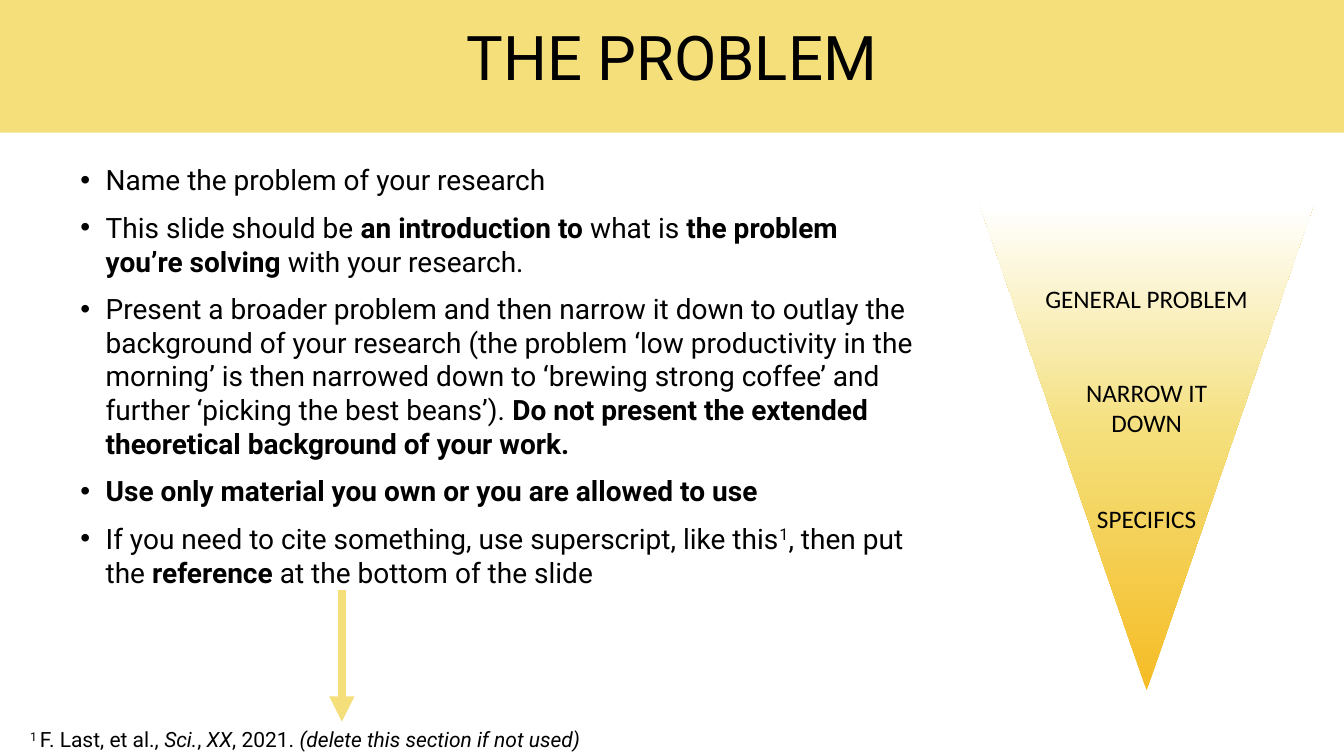
from collections import namedtuple
from dataclasses import dataclass

from lxml import etree
from pptx import Presentation
from pptx.dml.color import RGBColor
from pptx.enum.shapes import MSO_CONNECTOR as Connector, MSO_SHAPE as Preset
from pptx.enum.text import MSO_ANCHOR as Anchor, MSO_AUTO_SIZE as AutoSize, PP_ALIGN as Align
from pptx.oxml.ns import qn
from pptx.util import Inches, Pt

Box = namedtuple("Box", "column row columns rows")


@dataclass(frozen=True)
class Theme:
    """Colours, fonts and type sizes of the slide."""
    ink: str = "000000"
    yellow: str = "F4DF7A"
    funnel_stops: tuple = ((0, "F5BC25"), (52, "F4DF7A"), (99, "FFFFFF"))
    font: str = "Roboto"
    label_font: str = "Calibri"
    title_size: int = 44
    body_size: int = 20
    label_size: int = 18
    reference_size: int = 15
    arrow_width: int = 6


THEME = Theme()
COLUMNS, ROWS = 80, 45
SLIDE_WIDTH, SLIDE_HEIGHT = Inches(13.33), Inches(7.5)
STYLES = {"bold": {"bold": True}, "italic": {"italic": True}}

BULLETS = [
    [("Name the problem of your research", "")],
    [("This slide should be ", ""), ("an introduction to ", "bold"), ("what is", ""),
     (" the problem you’re solving ", "bold"), ("with your research.", "")],
    [("Present a broader problem and then narrow it down to outlay the background of your "
      "research (the problem ‘low productivity in the morning’ is then narrowed down to "
      "‘brewing strong coffee’ and further ‘picking the best beans’). ", ""),
     ("Do not present the extended theoretical background of your work.", "bold")],
    [("Use only material you own or you are allowed to use", "bold")],
    [("If you need to cite something, use superscript, like this", ""), ("1", "superscript"),
     (", then put the ", ""), ("reference", "bold"), (" at the bottom of the slide", "")],
]
REFERENCE = [
    ("1 ", "superscript"), ("F. Last, et al., ", ""), ("Sci.", "italic"), (", ", ""),
    ("XX", "italic"), (", 2021. ", ""), ("(delete this section if not used)", "italic"),
]
FUNNEL_LABELS = [
    (["GENERAL PROBLEM"], Box(3.3, 4.55, 13.4, 2.4)),
    (["NARROW IT", "DOWN"], Box(5.78, 10.15, 8.45, 4.25)),
    (["SPECIFICS"], Box(6.43, 17.65, 7.15, 2.4)),
]


def place(box):
    """Turn a grid box into slide lengths."""
    across, down = SLIDE_WIDTH / COLUMNS, SLIDE_HEIGHT / ROWS
    return (round(box.column * across), round(box.row * down),
            round(box.columns * across), round(box.rows * down))


def apply(target, values):
    """Set each named attribute on the target."""
    for name, value in values.items():
        setattr(target, name, value)


def add_preset(slide, preset, box):
    """Add a yellow preset shape without line or shadow."""
    shape = slide.shapes.add_shape(preset, *place(box))
    shape.shadow.inherit = False
    shape.line.fill.background()
    shape.fill.solid()
    shape.fill.fore_color.rgb = RGBColor.from_string(THEME.yellow)
    return shape


def add_bullet(paragraph):
    """Give a paragraph a hanging round bullet."""
    properties = paragraph._p.get_or_add_pPr()
    properties.set("marL", str(Inches(0.25)))
    properties.set("indent", str(-Inches(0.25)))
    etree.SubElement(properties, qn("a:buFont"), typeface="Arial")
    etree.SubElement(properties, qn("a:buChar"), char="•")


def add_text(slide, box, paragraphs, size, font=THEME.font, frame_format=None,
             paragraph_format=None, bulleted=False, gap=0):
    """Add a text box with one paragraph per list of styled runs."""
    frame = slide.shapes.add_textbox(*place(box)).text_frame
    apply(frame, {"word_wrap": True, "vertical_anchor": Anchor.TOP, **(frame_format or {})})
    for index, runs in enumerate(paragraphs):
        paragraph = frame.add_paragraph() if index else frame.paragraphs[0]
        if bulleted:
            add_bullet(paragraph)
        apply(paragraph, paragraph_format or {})
        if index and gap:
            paragraph.space_before = Pt(gap)
        for text, style in runs:
            run = paragraph.add_run()
            run.text = text
            apply(run.font, {"name": font, "size": Pt(size), **STYLES.get(style, {})})
            run.font.color.rgb = RGBColor.from_string(THEME.ink)
            if style == "superscript":
                run._r.get_or_add_rPr().set("baseline", "30000")


def add_header(slide, box):
    """Draw the title band and its title."""
    add_preset(slide, Preset.RECTANGLE, box)
    title_box = Box(box.column, box.row + 1, box.columns, 5.25)
    add_text(slide, title_box, [[("THE PROBLEM", "")]], THEME.title_size,
             frame_format={"vertical_anchor": Anchor.MIDDLE},
             paragraph_format={"alignment": Align.CENTER, "line_spacing": 0.9})


def add_reference(slide, box):
    """Write the reference and the arrow that leads down to it."""
    add_text(slide, box, [REFERENCE], THEME.reference_size)
    x, top, _, length = place(Box(box.column + 19.15, box.row - 7.85, 0, 7.85))
    arrow = slide.shapes.add_connector(Connector.STRAIGHT, x, top, x, top + length)
    arrow.line.width = Pt(THEME.arrow_width)
    arrow.line.color.rgb = RGBColor.from_string(THEME.yellow)
    etree.SubElement(arrow.line._get_or_add_ln(), qn("a:tailEnd"), type="triangle")
    etree.SubElement(arrow._element.spPr, qn("a:effectLst"))


def add_body(slide, box):
    """Write the bulleted advice."""
    add_text(slide, box, BULLETS, THEME.body_size, bulleted=True, gap=10)


def add_funnel(slide, box):
    """Draw the inverted gradient triangle with its labels."""
    triangle = add_preset(slide, Preset.ISOSCELES_TRIANGLE, box)
    triangle.rotation = 180
    solid = triangle._element.spPr.find(qn("a:solidFill"))
    gradient = etree.Element(qn("a:gradFill"), rotWithShape="1")
    stops = etree.SubElement(gradient, qn("a:gsLst"))
    for percent, color in THEME.funnel_stops:
        stop = etree.SubElement(stops, qn("a:gs"), pos=str(percent * 1000))
        etree.SubElement(stop, qn("a:srgbClr"), val=color)
    etree.SubElement(gradient, qn("a:lin"), ang=str(90 * 60000), scaled="0")
    solid.getparent().replace(solid, gradient)
    for lines, offset in FUNNEL_LABELS:
        label_box = offset._replace(column=box.column + offset.column, row=box.row + offset.row)
        add_text(slide, label_box, [[(line, "")] for line in lines], THEME.label_size,
                 THEME.label_font,
                 {"word_wrap": False, "auto_size": AutoSize.SHAPE_TO_FIT_TEXT},
                 {"alignment": Align.CENTER})


def main():
    """Build and save the slide."""
    presentation = Presentation()
    apply(presentation, {"slide_width": SLIDE_WIDTH, "slide_height": SLIDE_HEIGHT})
    slide = presentation.slides.add_slide(presentation.slide_layouts[6])
    add_header(slide, Box(0, 0, COLUMNS, 7.9))
    add_reference(slide, Box(1.2, 42.95, 39, 2.1))
    add_body(slide, Box(4.2, 9.4, 50.9, 26.15))
    add_funnel(slide, Box(58.25, 12, 20, 29.1))
    presentation.save("out.pptx")


if __name__ == "__main__":
    main()
